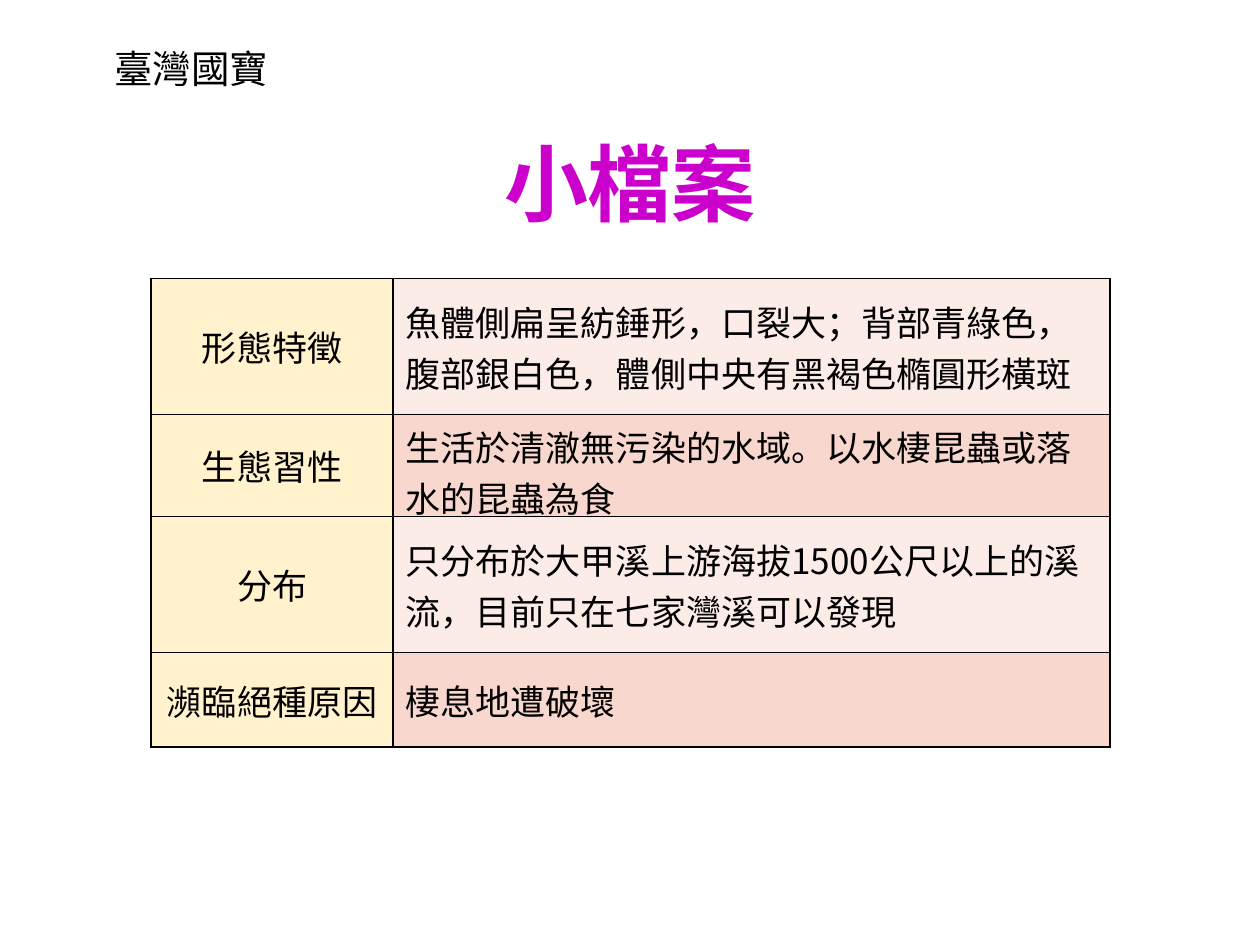
from lxml import etree
from pptx import Presentation, util as u
from pptx.dml.color import RGBColor
from pptx.enum import text
from pptx.oxml import ns

COLORS = {
    "ink": "000000",
    "heading": "CC00CC",
    "label": "FFF2CD",
    "light": "FCECE8",
    "dark": "F8D7CE",
}
FACTS = [
    ("形態特徵", "魚體側扁呈紡錘形，口裂大；背部青綠色，腹部銀白色，體側中央有黑褐色橢圓形橫斑", 1.08),
    ("生態習性", "生活於清澈無污染的水域。以水棲昆蟲或落水的昆蟲為食", 0.81),
    ("分布", "只分布於大甲溪上游海拔1500公尺以上的溪流，目前只在七家灣溪可以發現", 1.08),
    ("瀕臨絕種原因", "棲息地遭破壞", 0.75),
]


def inches(*lengths):
    return [u.Inches(length) for length in lengths]


class FactSheet:
    font = "Noto Sans CJK SC"

    def __init__(self, slide):
        self.slide = slide

    def add_words(self, frame, words, size, color="ink", bold=False, align=text.PP_ALIGN.LEFT):
        paragraph = frame.paragraphs[0]
        paragraph.alignment = align
        run = paragraph.add_run()
        run.text = words
        run.font.size = u.Pt(size)
        run.font.bold = bold
        run.font.color.rgb = RGBColor.from_string(COLORS[color])
        run.font.name = self.font
        # East Asian characters take their typeface from a:ea
        etree.SubElement(run.font._element, ns.qn("a:ea"), typeface=self.font)
        return paragraph

    def header(self, words, *box):
        frame = self.slide.shapes.add_textbox(*inches(*box)).text_frame
        frame.word_wrap = True
        frame.auto_size = text.MSO_AUTO_SIZE.SHAPE_TO_FIT_TEXT
        self.add_words(frame, words, 22)

    def title(self, words, *box):
        heading = self.slide.shapes.title
        heading.left, heading.top, heading.width, heading.height = inches(*box)
        heading.text_frame.vertical_anchor = text.MSO_ANCHOR.MIDDLE
        paragraph = self.add_words(heading.text_frame, words, 48, "heading", True,
                                   text.PP_ALIGN.CENTER)
        paragraph.line_spacing = 0.9

    def cell(self, cell, words, fill, align):
        cell.vertical_anchor = text.MSO_ANCHOR.MIDDLE
        self.add_words(cell.text_frame, words, 20, align=align)
        self.borders(cell)
        cell.fill.solid()
        cell.fill.fore_color.rgb = RGBColor.from_string(COLORS[fill])

    def borders(self, cell):
        properties = cell._tc.get_or_add_tcPr()
        for side in ("lnL", "lnR", "lnT", "lnB"):
            line = etree.SubElement(properties, ns.qn(f"a:{side}"), w=str(u.Pt(1)))
            solid = etree.SubElement(line, ns.qn("a:solidFill"))
            etree.SubElement(solid, ns.qn("a:srgbClr"), val=COLORS["ink"])

    def facts(self, rows, widths, *box):
        table = self.slide.shapes.add_table(len(rows), len(widths), *inches(*box)).table
        for column, width in zip(table.columns, widths):
            column.width = u.Inches(width)
        for index, (label, fact, height) in enumerate(rows):
            table.rows[index].height = u.Inches(height)
            self.cell(table.cell(index, 0), label, "label", text.PP_ALIGN.CENTER)
            shade = "dark" if index % 2 else "light"
            self.cell(table.cell(index, 1), fact, shade, text.PP_ALIGN.LEFT)


def main():
    deck = Presentation()
    deck.slide_width, deck.slide_height = inches(10, 7.5)
    sheet = FactSheet(deck.slides.add_slide(deck.slide_layouts[5]))
    sheet.header("臺灣國寶", 0.81, 0.31, 2, 0.47)
    sheet.title("小檔案", 0.69, 0.77, 8.62, 1.45)
    sheet.facts(FACTS, (1.92, 5.69), 1.2, 2.21, 7.6, 3.71)
    deck.save("out.pptx")


if __name__ == "__main__":
    main()
